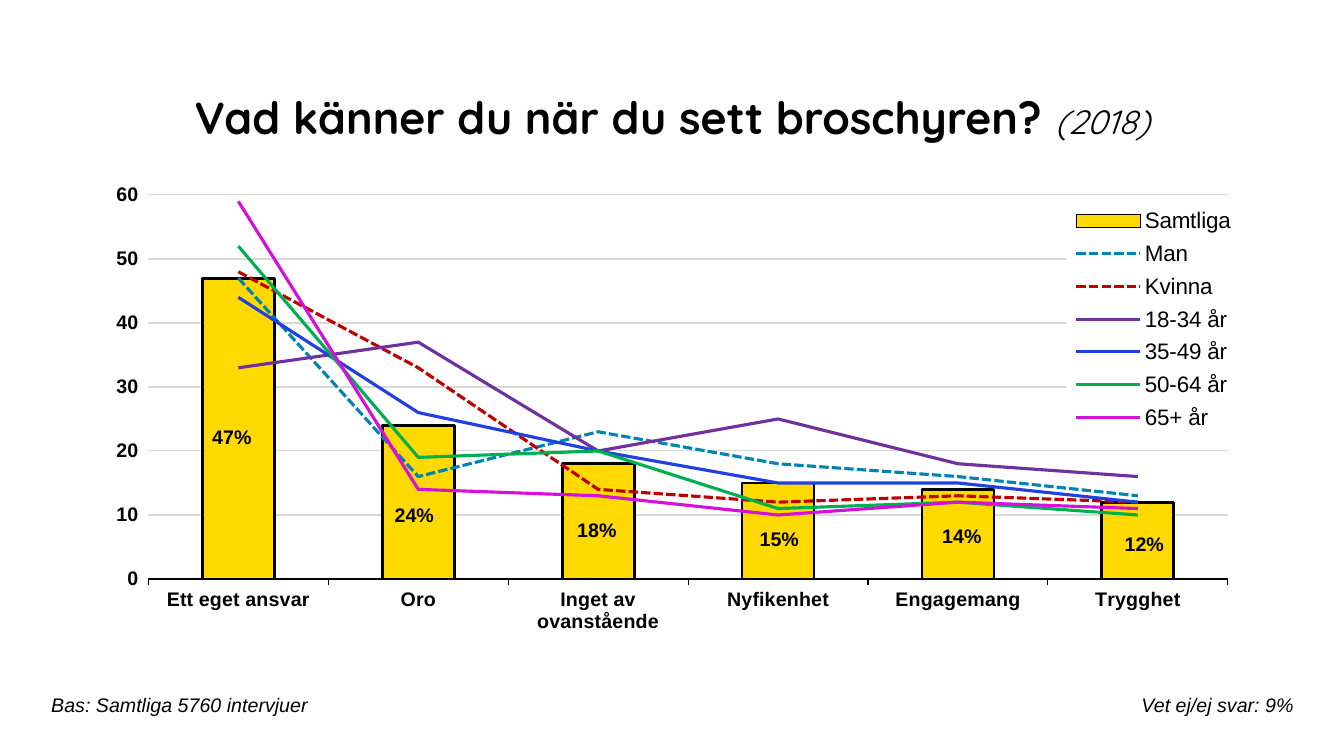
from dataclasses import dataclass

from lxml import etree
from pptx import Presentation
from pptx.chart.data import CategoryChartData
from pptx.dml.color import RGBColor
from pptx.enum.chart import XL_CHART_TYPE as ChartType, XL_LEGEND_POSITION as LegendPosition
from pptx.enum.chart import XL_MARKER_STYLE as MarkerStyle, XL_TICK_MARK as TickMark
from pptx.enum.dml import MSO_LINE_DASH_STYLE as DashStyle
from pptx.enum.text import MSO_ANCHOR as Anchor, MSO_AUTO_SIZE as AutoSize, PP_ALIGN as Align
from pptx.oxml import parse_xml
from pptx.oxml.ns import nsdecls, qn
from pptx.util import Inches, Pt


@dataclass(frozen=True)
class Theme:
    heading_font: str = "Quicksand"
    body_font: str = "Arial"
    text: str = "000000"
    background: str = "FFFFFF"
    bar: str = "FFD900"
    grid: str = "D9D9D9"
    title_size: int = 32
    year_size: int = 24
    legend_size: int = 16
    body_size: int = 14
    chart_size: int = 10


CATEGORIES = ["Ett eget ansvar", "Oro", "Inget av ovanstående",
              "Nyfikenhet", "Engagemang", "Trygghet"]
TOTALS = [47, 24, 18, 15, 14, 12]
GROUPS = [
    ("Man", [47, 16, 23, 18, 16, 13], "0084B4", True),
    ("Kvinna", [48, 33, 14, 12, 13, 12], "BF0000", True),
    ("18-34 år", [33, 37, 20, 25, 18, 16], "7030A0", False),
    ("35-49 år", [44, 26, 20, 15, 15, 12], "2040E0", False),
    ("50-64 år", [52, 19, 20, 11, 12, 10], "00B050", False),
    ("65+ år", [59, 14, 13, 10, 12, 11], "D510DA", False),
]
LABEL_TOPS = [4.17, 4.94, 5.09, 5.18, 5.15, 5.23]
LABEL_LEFT, LABEL_PITCH = 1.95, 1.81


def manual_layout(x, y, width, height, inner=False):
    target = '<c:layoutTarget val="inner"/>' if inner else ""
    return parse_xml(
        f'<c:layout {nsdecls("c")}><c:manualLayout>{target}'
        '<c:xMode val="edge"/><c:yMode val="edge"/>'
        f'<c:x val="{x}"/><c:y val="{y}"/><c:w val="{width}"/><c:h val="{height}"/>'
        '</c:manualLayout></c:layout>')


def remove_children(element, tag):
    for child in element.findall(qn(tag)):
        element.remove(child)


class SlideBuilder:
    def __init__(self, slide, theme):
        self.slide = slide
        self.theme = theme

    def style_font(self, font, size, bold=False, italic=False, name=None):
        font.name = name or self.theme.body_font
        font.size = Pt(size)
        font.bold = bold
        font.italic = italic
        font.color.rgb = RGBColor.from_string(self.theme.text)

    def style_line(self, line, color, width):
        line.color.rgb = RGBColor.from_string(color)
        line.width = Pt(width)

    def add_text(self, box, runs, align=Align.LEFT, **style):
        shape = self.slide.shapes.add_textbox(*map(Inches, box))
        frame = shape.text_frame
        frame.word_wrap = True
        frame.auto_size = AutoSize.SHAPE_TO_FIT_TEXT
        paragraph = frame.paragraphs[0]
        paragraph.alignment = align
        for text, run_style in runs:
            run = paragraph.add_run()
            run.text = text
            self.style_font(run.font, **{"size": self.theme.body_size, **style, **run_style})
        return shape

    def add_title(self, box, title, year):
        shape = self.add_text(
            box,
            [(title, {"size": self.theme.title_size, "bold": True}),
             (year, {"size": self.theme.year_size, "italic": True})],
            Align.CENTER, name=self.theme.heading_font)
        shape.text_frame.auto_size = AutoSize.NONE
        shape.text_frame.vertical_anchor = Anchor.MIDDLE
        shape.text_frame.paragraphs[0].line_spacing = 0.9

    def add_combined_chart(self, box):
        data = CategoryChartData()
        data.categories = CATEGORIES
        data.add_series("Samtliga", TOTALS)
        for name, values, _, _ in GROUPS:
            data.add_series(name, values)
        chart = self.slide.shapes.add_chart(
            ChartType.COLUMN_CLUSTERED, *map(Inches, box), data).chart
        chart.has_title = False
        self.style_font(chart.font, self.theme.chart_size)
        self.move_groups_to_lines(chart)
        self.style_bars(chart.plots[0])
        self.style_group_lines(chart.plots[1])
        self.style_axes(chart)
        self.style_legend(chart)

    def move_groups_to_lines(self, chart):
        bars = chart.plots[0]._element
        lines = parse_xml(
            f'<c:lineChart {nsdecls("c")}><c:grouping val="standard"/>'
            '<c:varyColors val="0"/></c:lineChart>')
        for series in bars.findall(qn("c:ser"))[1:]:
            remove_children(series, "c:invertIfNegative")
            lines.append(series)
        etree.SubElement(lines, qn("c:marker")).set("val", "1")
        for axis in bars.findall(qn("c:axId")):
            etree.SubElement(lines, qn("c:axId")).set("val", axis.get("val"))
        bars.addnext(lines)
        plot_area = bars.getparent()
        remove_children(plot_area, "c:layout")
        plot_area.insert(0, manual_layout(0.048, 0.042, 0.931, 0.823, inner=True))

    def style_bars(self, plot):
        plot.vary_by_categories = False
        plot.gap_width = 150
        series = plot.series[0]
        series.format.fill.solid()
        series.format.fill.fore_color.rgb = RGBColor.from_string(self.theme.bar)
        self.style_line(series.format.line, self.theme.text, 2)

    def style_group_lines(self, plot):
        for series, (_, _, color, dashed) in zip(plot.series, GROUPS):
            series.smooth = False
            series.marker.style = MarkerStyle.NONE
            self.style_line(series.format.line, color, 2.25)
            if dashed:
                series.format.line.dash_style = DashStyle.SQUARE_DOT

    def style_axes(self, chart):
        for axis in (chart.category_axis, chart.value_axis):
            axis.major_tick_mark = TickMark.OUTSIDE
            axis.minor_tick_mark = TickMark.NONE
            self.style_font(axis.tick_labels.font, self.theme.body_size, bold=True)
        self.style_line(chart.category_axis.format.line, self.theme.text, 0.75)
        values = chart.value_axis
        values.minimum_scale, values.maximum_scale, values.major_unit = 0, 60, 10
        values.format.line.fill.background()
        values.has_major_gridlines = True
        self.style_line(values.major_gridlines.format.line, self.theme.grid, 0.75)

    def style_legend(self, chart):
        chart.has_legend = True
        legend = chart.legend
        legend.position = LegendPosition.CORNER
        legend.include_in_layout = True
        self.style_font(legend.font, self.theme.legend_size)
        element = legend._element
        remove_children(element, "c:layout")
        text_style = element.find(qn("c:txPr"))
        remove_children(element, "c:overlay")
        text_style.addprevious(manual_layout(0.84, 0.053, 0.15, 0.51))
        text_style.addprevious(parse_xml(f'<c:overlay {nsdecls("c")} val="1"/>'))
        text_style.addprevious(parse_xml(
            f'<c:spPr {nsdecls("c", "a")}><a:solidFill>'
            f'<a:srgbClr val="{self.theme.background}"/></a:solidFill></c:spPr>'))


def main():
    presentation = Presentation()
    presentation.slide_width = Inches(13.33)
    presentation.slide_height = Inches(7.5)
    slide = presentation.slides.add_slide(presentation.slide_layouts[6])
    builder = SlideBuilder(slide, Theme())

    builder.add_combined_chart((0.92, 1.74, 11.5, 4.63))
    builder.add_title((1.55, 0.83, 10.23, 0.72),
                      "Vad känner du när du sett broschyren? ", "(2018)")
    builder.add_text((0.41, 6.83, 5.27, 0.34),
                     [("Bas: Samtliga 5760 intervjuer", {})], italic=True)
    builder.add_text((10.87, 6.83, 2.06, 0.34),
                     [("Vet ej/ej svar: 9%", {})], Align.RIGHT, italic=True)
    for index, (total, top) in enumerate(zip(TOTALS, LABEL_TOPS)):
        builder.add_text((LABEL_LEFT + index * LABEL_PITCH, top, 0.7, 0.34),
                         [(f"{total}%", {})], Align.CENTER, bold=True)

    presentation.save("out.pptx")


if __name__ == "__main__":
    main()
